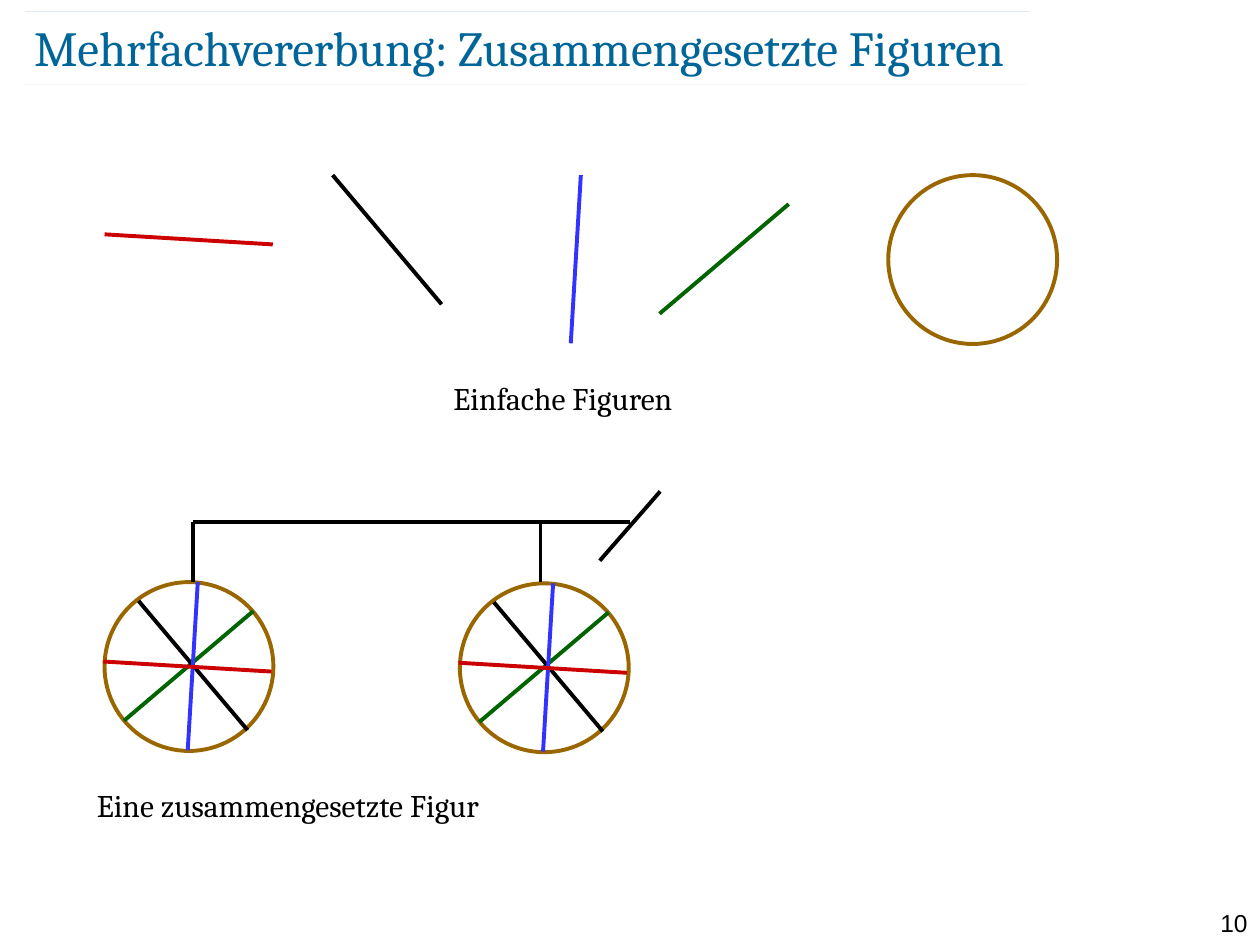
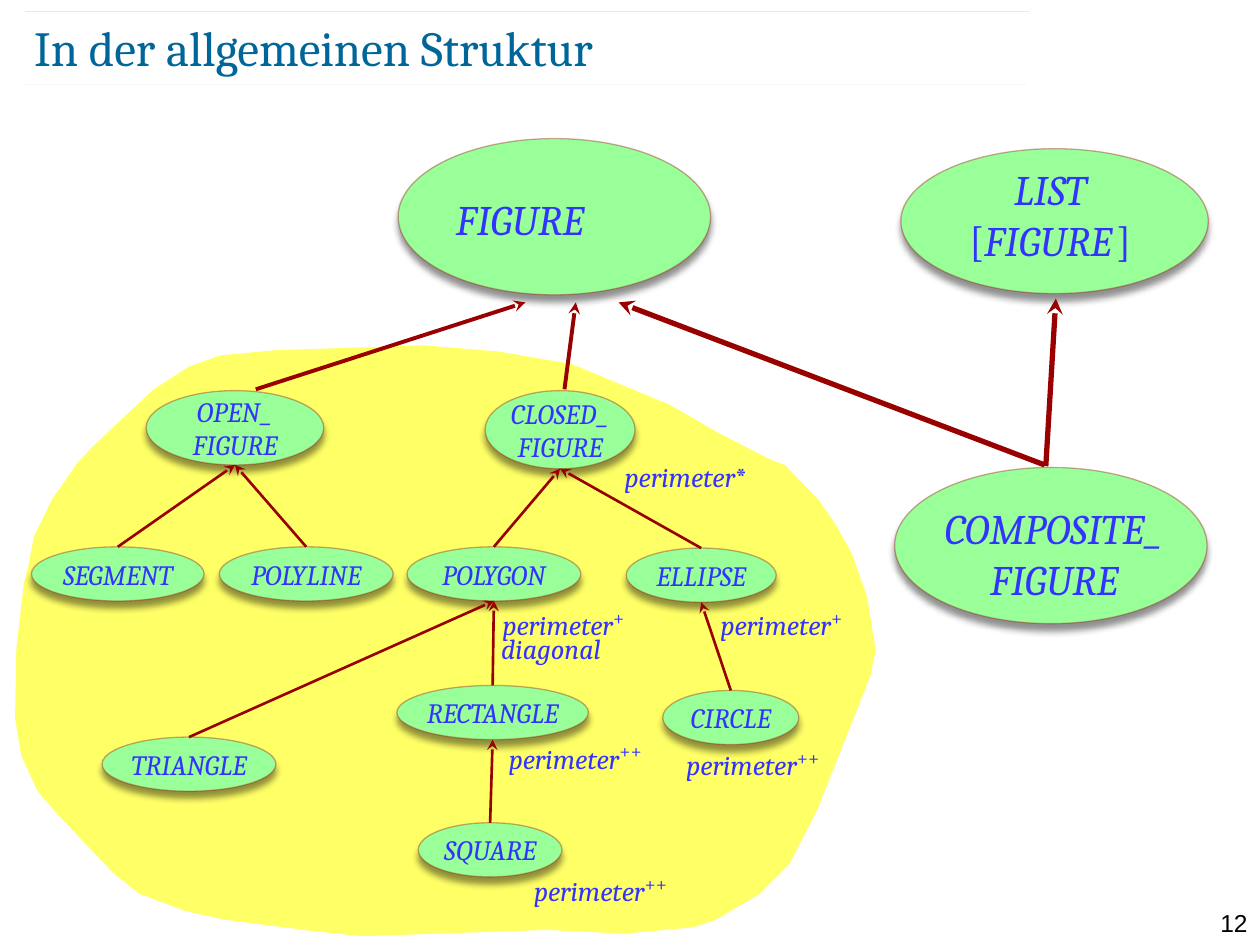
from typing import NamedTuple

from lxml import etree
from pptx import Presentation
from pptx.dml.color import RGBColor
from pptx.enum.shapes import MSO_CONNECTOR, MSO_SHAPE
from pptx.enum.text import MSO_ANCHOR, MSO_AUTO_SIZE, PP_ALIGN
from pptx.oxml.ns import qn
from pptx.util import Emu, Inches, Pt

LINE = MSO_CONNECTOR.STRAIGHT
OVAL = MSO_SHAPE.OVAL
LEFT, CENTER, RIGHT = PP_ALIGN.LEFT, PP_ALIGN.CENTER, PP_ALIGN.RIGHT
MIDDLE = MSO_ANCHOR.MIDDLE
FIT, FIXED = MSO_AUTO_SIZE.SHAPE_TO_FIT_TEXT, MSO_AUTO_SIZE.NONE

COLUMNS, ROWS = 100, 75
SERIF, SANS = "Cambria", "Arial"
TEAL, BLACK, BLUE = "006699", "000000", "3333FF"
GREEN, RED, BROWN = "006400", "CC0000", "996600"
MINT, MAROON, YELLOW = "99FF99", "990000", "FFFF66"
WHEEL_SIZE = 13.4
STROKE = 2.25

prs = Presentation()
prs.slide_width, prs.slide_height = Inches(10), Inches(7.5)


class Box(NamedTuple):
    left: float
    top: float
    width: float
    height: float


class Span(NamedTuple):
    text: str
    size: float
    color: str = BLUE
    italic: bool = True
    baseline: int = 0
    font: str = SERIF


class Spoke(NamedTuple):
    color: str
    dx: float
    dy: float
    in_wheel: tuple[float, float]
    alone: tuple[float, float]


class Node(NamedTuple):
    label: str
    box: Box
    parent: str = ""


class Arrow(NamedTuple):
    start: tuple[float, float]
    end: tuple[float, float]
    width: float


class Note(NamedTuple):
    left: float
    top: float
    width: float
    text: str
    mark: str = ""


SPOKES = [
    Spoke(GREEN, -10.25, 8.7, (11.8, 2.3), (62.6, 16.2)),
    Spoke(BLACK, 8.65, 10.25, (2.7, 1.5), (26.4, 13.9)),
    Spoke(BLUE, -0.8, 13.35, (7.4, 0), (46.1, 13.9)),
    Spoke(RED, 13.35, 0.8, (-0.1, 6.3), (8.3, 18.6)),
]
WHEELS = [(8.3, 46.2), (36.5, 46.3)]
FRAME = [
    ((15.3, 46.2), (15.3, 41.4)),
    ((42.9, 46.2), (42.9, 41.4)),
    ((15.3, 41.4), (50, 41.4)),
    ((52.4, 39), (47.6, 44.5)),
]

BIG_OVALS = [Box(71, 37.1, 24.8, 12.4), Box(31.6, 11, 24.8, 12.4), Box(71.5, 11.8, 24.4, 11.5)]
NODES = [
    Node("OPEN_\nFIGURE", Box(11.6, 31, 14.1, 5.9)),
    Node("CLOSED_\nFIGURE", Box(38.5, 31, 11.9, 6.2)),
    Node("SEGMENT", Box(2.5, 43.4, 13.7, 4.3), "OPEN_\nFIGURE"),
    Node("POLYLINE", Box(17.4, 43.4, 13.8, 4.3), "OPEN_\nFIGURE"),
    Node("POLYGON", Box(32.3, 43.4, 13.8, 4.3), "CLOSED_\nFIGURE"),
    Node("ELLIPSE", Box(49.7, 43.5, 11.9, 4.3), "CLOSED_\nFIGURE"),
    Node("RECTANGLE", Box(31.5, 54.4, 15.2, 4.3), "POLYGON"),
    Node("SQUARE", Box(33.2, 65.3, 11.4, 4.3), "RECTANGLE"),
    Node("CIRCLE", Box(52.6, 54.8, 10.8, 4.3), "ELLIPSE"),
    Node("TRIANGLE", Box(8.1, 58.5, 13.8, 4.3), "POLYGON"),
]
TOP_ARROWS = [
    Arrow((83, 37), (83.8, 23.7), 3),
    Arrow((82.9, 36.9), (49.1, 24), 3),
    Arrow((44.8, 30.9), (45.7, 24), STROKE),
    Arrow((20.3, 30.9), (41.7, 24), STROKE),
]
NOTES = [
    Note(56.2, 47.2, 13.8, "perimeter", "+"),
    Note(48.6, 36, 14.3, "perimeter", "*"),
    Note(53.5, 58.3, 16, "perimeter", "++"),
    Note(38.8, 49.6, 11.6, "diagonal"),
    Note(41.4, 68.3, 16, "perimeter", "++"),
    Note(39.4, 57.8, 16, "perimeter", "++"),
    Note(38.9, 47.2, 13.8, "perimeter", "+"),
]
CLOUD = [
    (55.9, 33.7), (53.1, 32.1), (45.4, 28.9), (39.6, 27.9), (33.6, 27.4), (21.8, 27.8),
    (17.5, 28.2), (15, 29.1), (12.2, 30.9), (9.1, 33.8), (7.3, 35.5), (6.1, 36.8),
    (4.8, 38.7), (4.2, 39.5), (2.7, 42.6), (2.2, 45.2), (1.9, 46.3), (1.3, 51.5),
    (1.2, 57), (1.7, 60), (3, 62.8), (4.2, 64.2), (5.4, 65.5), (9, 69.3), (9.9, 70),
    (11, 70.9), (14.7, 72.3), (17.9, 73), (24.9, 73.9), (28.8, 74.3), (43.4, 73.8),
    (49.5, 74.1), (55, 73.6), (56.8, 73), (60.2, 71), (61.9, 69.3), (62.7, 68.5),
    (64.9, 64.2), (69.1, 53.6), (69.5, 51.6), (68.8, 47.3), (67.6, 43.9), (66.3, 41.6),
    (65, 39.7), (62.3, 36.9), (61.2, 36.5), (57.1, 34.4),
]


def col(n: float) -> Emu:
    return Emu(round(prs.slide_width * n / COLUMNS))


def row(n: float) -> Emu:
    return Emu(round(prs.slide_height * n / ROWS))


def place(box: Box) -> tuple[Emu, Emu, Emu, Emu]:
    return col(box.left), row(box.top), col(box.width), row(box.height)


def rgb(value: str) -> RGBColor:
    return RGBColor.from_string(value)


def stroke(shape, color: str, width: float, alpha: int = 100) -> None:
    shape.line.color.rgb = rgb(color)
    shape.line.width = Pt(width)
    if alpha < 100:
        clr = shape._element.spPr.find(qn("a:ln")).find(".//" + qn("a:srgbClr"))
        etree.SubElement(clr, qn("a:alpha"), val=str(alpha * 1000))


def add_line(s, start, end, color: str, width: float, alpha: int = 100, arrow: bool = False) -> None:
    line = s.shapes.add_connector(LINE, col(start[0]), row(start[1]), col(end[0]), row(end[1]))
    stroke(line, color, width, alpha)
    sp_pr = line._element.spPr
    if arrow:
        etree.SubElement(sp_pr.find(qn("a:ln")), qn("a:tailEnd"), type="stealth")
    etree.SubElement(sp_pr, qn("a:effectLst"))


def write(tf, spans: list[Span], align=LEFT) -> None:
    p = tf.paragraphs[0]
    p.text = spans[0].text
    p.alignment = align
    styled = [(r, spans[0]) for r in p.runs]
    for span in spans[1:]:
        r = p.add_run()
        r.text = span.text
        styled.append((r, span))
    for r, span in styled:
        r.font.name, r.font.size = span.font, Pt(span.size)
        r.font.italic = span.italic
        r.font.color.rgb = rgb(span.color)
        if span.baseline:
            r._r.get_or_add_rPr().set("baseline", str(span.baseline * 1000))


def add_text(s, box: Box, spans: list[Span], align=LEFT) -> None:
    tf = s.shapes.add_textbox(*place(box)).text_frame
    tf.word_wrap = True
    tf.auto_size = FIT
    write(tf, spans, align)


def add_wheel_rim(s, left: float, top: float) -> None:
    sp = s.shapes.add_shape(OVAL, *place(Box(left, top, WHEEL_SIZE, WHEEL_SIZE)))
    sp.shadow.inherit = False
    sp.fill.background()
    stroke(sp, BROWN, STROKE)


def add_class_oval(s, box: Box, label: str = "") -> None:
    sp = s.shapes.add_shape(OVAL, *place(box))
    sp.shadow.inherit = False
    sp.fill.solid()
    sp.fill.fore_color.rgb = rgb(MINT)
    stroke(sp, MAROON, 0.75, 34)
    effects = sp._element.spPr.find(qn("a:effectLst"))
    shadow = etree.SubElement(effects, qn("a:outerShdw"), blurRad=str(int(Pt(4))),
                              dist=str(int(Pt(4))), dir="5400000", algn="ctr", rotWithShape="0")
    clr = etree.SubElement(shadow, qn("a:srgbClr"), val=BLACK)
    etree.SubElement(clr, qn("a:alpha"), val="43000")
    if label:
        tf = sp.text_frame
        tf.word_wrap = False
        tf.vertical_anchor = MIDDLE
        write(tf, [Span(label, 16)], CENTER)


def add_cloud(s) -> None:
    points = [(col(x), row(y)) for x, y in CLOUD]
    builder = s.shapes.build_freeform(*points[0], scale=1.0)
    builder.add_line_segments(points[1:], close=True)
    sp = builder.convert_to_shape()
    sp.shadow.inherit = False
    sp.fill.solid()
    sp.fill.fore_color.rgb = rgb(YELLOW)
    sp.line.fill.background()


def add_slide(title: str, number: int):
    s = prs.slides.add_slide(prs.slide_layouts[5])
    for left, top in ((1.8, 6.7), (2, 0.9)):
        add_line(s, (left, top), (left + 79.7, top), TEAL, 0.1, 35)
    ph = s.shapes.title
    ph.left, ph.top, ph.width, ph.height = place(Box(2.7, 1.3, 86.9, 4.8))
    tf = ph.text_frame
    tf.margin_left = tf.margin_top = tf.margin_right = tf.margin_bottom = 0
    tf.vertical_anchor = MIDDLE
    tf.auto_size = FIXED
    write(tf, [Span(title, 28, TEAL, False)])
    add_text(s, Box(94.5, 71.6, 5.5, 2.4), [Span(str(number), 14, BLACK, False, font=SANS)], RIGHT)
    return s


def build_figures() -> None:
    s = add_slide("Mehrfachvererbung: Zusammengesetzte Figuren", 10)
    add_wheel_rim(s, 70.5, 13.9)
    for left, top in WHEELS:
        add_wheel_rim(s, left, top)
    for spoke in SPOKES:
        starts = [spoke.alone] + [(left + spoke.in_wheel[0], top + spoke.in_wheel[1])
                                  for left, top in WHEELS]
        for x, y in starts:
            add_line(s, (x, y), (x + spoke.dx, y + spoke.dy), spoke.color, STROKE)
    for start, end in FRAME:
        add_line(s, start, end, BLACK, STROKE)
    add_text(s, Box(35, 29.6, 26.8, 4), [Span("Einfache Figuren", 18, BLACK, False)])
    add_text(s, Box(6.7, 61.9, 39.3, 4), [Span("Eine zusammengesetzte Figur", 18, BLACK, False)])


def build_structure() -> None:
    s = add_slide("In der allgemeinen Struktur", 12)
    for box in BIG_OVALS:
        add_class_oval(s, box)
    add_text(s, Box(71.2, 39.4, 24.9, 9.1), [Span("COMPOSITE_\nFIGURE", 24)], CENTER)
    add_text(s, Box(35.2, 14.9, 17.2, 5), [Span("FIGURE", 24)])
    add_text(s, Box(74.3, 12.5, 18.1, 9.1), [
        Span("LIST ", 24), Span("[", 24, italic=False), Span("FIGURE", 24),
        Span(" ", 12), Span("]", 24, italic=False)], CENTER)
    add_cloud(s)
    for node in NODES:
        add_class_oval(s, node.box, node.label)
    boxes = {node.label: node.box for node in NODES}
    for node in NODES:
        if node.parent:
            child, parent = node.box, boxes[node.parent]
            add_line(s, (child.left + child.width / 2, child.top),
                     (parent.left + parent.width / 2, parent.top + parent.height),
                     MAROON, 1.5, arrow=True)
    for note in NOTES:
        spans = [Span(note.text, 16)]
        if note.mark == "*":
            spans.append(Span(note.mark, 16, italic=False))
        elif note.mark:
            spans.append(Span(note.mark, 20, italic=False, baseline=30))
        add_text(s, Box(note.left, note.top, note.width, 3.7), spans)
    for arrow in TOP_ARROWS:
        add_line(s, arrow.start, arrow.end, MAROON, arrow.width, arrow=True)


def main() -> None:
    build_figures()
    build_structure()
    prs.save("out.pptx")


if __name__ == "__main__":
    main()
